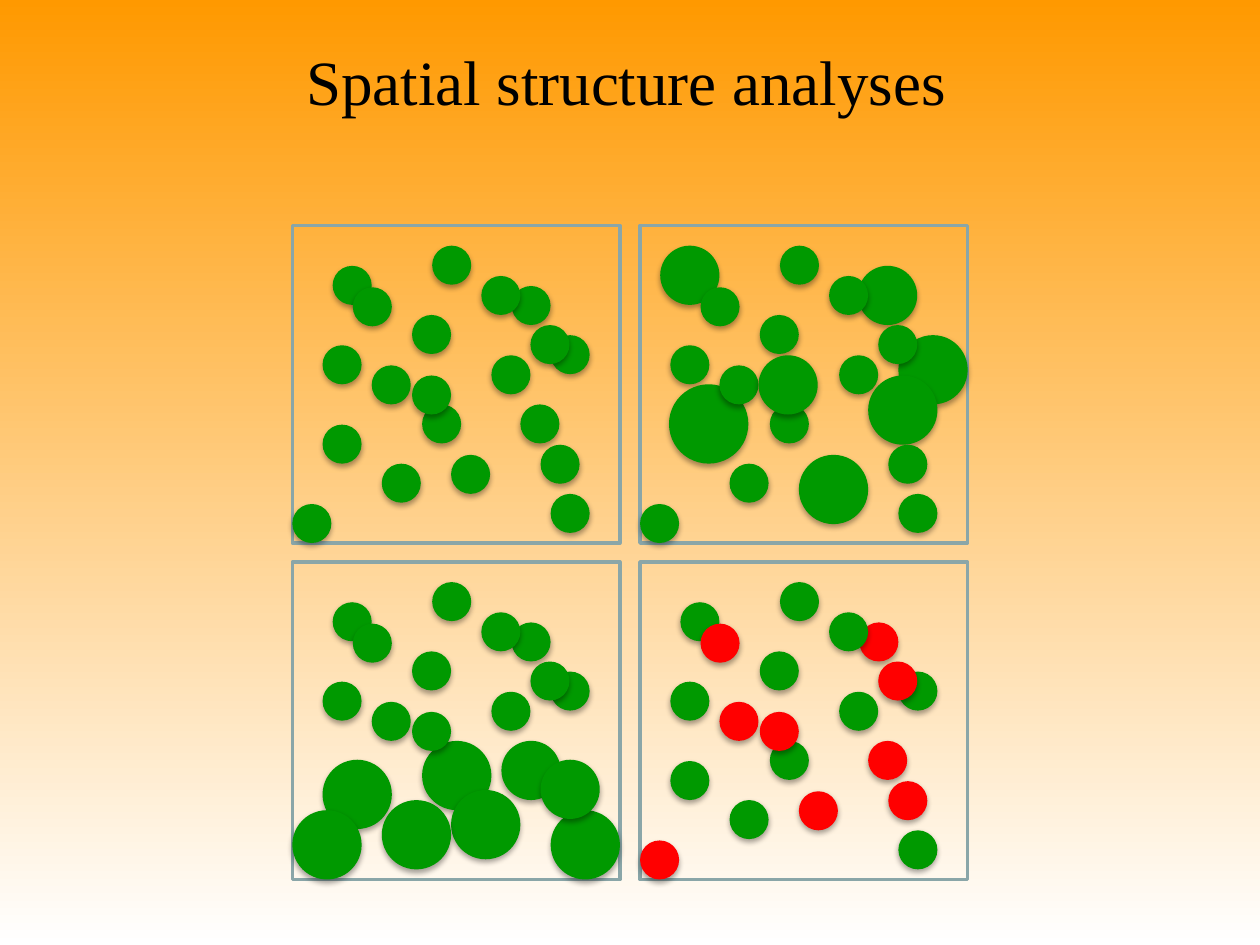
import pptx
import pptx.dml.color
import pptx.enum.shapes
import pptx.enum.text
import pptx.oxml
import pptx.util

PX = 9144
ORANGE = pptx.dml.color.RGBColor(0xFF, 0x99, 0x00)
WHITE = pptx.dml.color.RGBColor(0xFF, 0xFF, 0xFF)
BLACK = pptx.dml.color.RGBColor(0x00, 0x00, 0x00)
FRAME = pptx.dml.color.RGBColor(0x8A, 0xA6, 0xA8)
GREEN = pptx.dml.color.RGBColor(0x00, 0x99, 0x00)
RED = pptx.dml.color.RGBColor(0xFF, 0x00, 0x00)

SHADOW = (
    '<a:effectLst xmlns:a="http://schemas.openxmlformats.org/drawingml/2006/main">'
    '<a:outerShdw blurRad="40000" dist="23000" dir="5400000" rotWithShape="0">'
    '<a:srgbClr val="000000"><a:alpha val="35000"/></a:srgbClr>'
    '</a:outerShdw></a:effectLst>'
)

PANEL_LEFT, PANEL_TOP = 232, 179
PANEL_WIDTH, PANEL_HEIGHT = 260, 252
COLUMN_STEP, ROW_STEP = 276, 267

TREE_SIZE = 31
TREES = [
    (32, 32), (48, 49), (174, 48), (24, 95), (24, 158),
    (111, 16), (95, 71), (63, 111), (205, 87), (158, 103),
    (103, 142), (0, 221), (126, 182), (181, 142), (205, 213),
    (71, 189), (197, 174), (189, 79), (95, 119), (150, 40),
]
SCATTERED_LARGE = {
    0: (16, 16, 47), 2: (173, 32, 47), 4: (23, 126, 63), 8: (205, 87, 55),
    12: (126, 182, 55), 13: (181, 119, 55), 18: (94, 103, 47),
}
LOWER_LARGE = {
    4: (24, 157, 55), 10: (103, 142, 55), 11: (0, 197, 55), 12: (126, 181, 55),
    13: (166, 142, 47), 14: (205, 197, 55), 15: (71, 189, 55), 16: (197, 157, 47),
}
RED_TREES = {1, 2, 7, 11, 12, 13, 16, 17, 18}
PANELS = [({}, set()), (SCATTERED_LARGE, set()), (LOWER_LARGE, set()), ({}, RED_TREES)]


def scaled(box):
    return [pptx.util.Emu(length * PX) for length in box]


def paint_background(page):
    fill = page.background.fill
    fill.gradient()
    fill.gradient_angle = 270
    for stop, position, color in zip(fill.gradient_stops, (0, 1), (ORANGE, WHITE)):
        stop.position = position
        stop.color.rgb = color


def place_title(page, box):
    title = page.shapes.title
    title.left, title.top, title.width, title.height = scaled(box)
    frame = title.text_frame
    frame.word_wrap = False
    frame.auto_size = pptx.enum.text.MSO_AUTO_SIZE.NONE
    frame.vertical_anchor = pptx.enum.text.MSO_ANCHOR.TOP
    para = frame.paragraphs[0]
    para.alignment = pptx.enum.text.PP_ALIGN.LEFT
    para.line_spacing = 1.0
    para.space_before = pptx.util.Pt(0)
    span = para.add_run()
    span.text = "Spatial structure analyses"
    span.font.name = "Times New Roman"
    span.font.size = pptx.util.Pt(36)
    span.font.color.rgb = BLACK


def place_tree(group, box, color):
    tree = group.shapes.add_shape(pptx.enum.shapes.MSO_SHAPE.OVAL, *scaled(box))
    tree.fill.solid()
    tree.fill.fore_color.rgb = color
    tree.line.fill.background()
    tree.element.spPr.append(pptx.oxml.parse_xml(SHADOW))


def place_panel(page, box, large_trees, red_trees):
    left, top = box[:2]
    group = page.shapes.add_group_shape()
    frame = group.shapes.add_shape(pptx.enum.shapes.MSO_SHAPE.RECTANGLE, *scaled(box))
    frame.shadow.inherit = False
    frame.fill.background()
    frame.line.color.rgb = FRAME
    frame.line.width = pptx.util.Pt(2)
    for index, (x, y) in enumerate(TREES):
        x, y, size = large_trees.get(index, (x, y, TREE_SIZE))
        color = RED if index in red_trees else GREEN
        place_tree(group, (left + x, top + y, size, size), color)


def main():
    deck = pptx.Presentation()
    deck.slide_width, deck.slide_height = scaled((1000, 750))
    page = deck.slides.add_slide(deck.slide_layouts.get_by_name("Title Only"))
    paint_background(page)
    for index, (large_trees, red_trees) in enumerate(PANELS):
        row, column = divmod(index, 2)
        box = (PANEL_LEFT + column * COLUMN_STEP, PANEL_TOP + row * ROW_STEP,
               PANEL_WIDTH, PANEL_HEIGHT)
        place_panel(page, box, large_trees, red_trees)
    place_title(page, (233, 29, 533, 71))
    deck.save("out.pptx")


if __name__ == "__main__":
    main()
